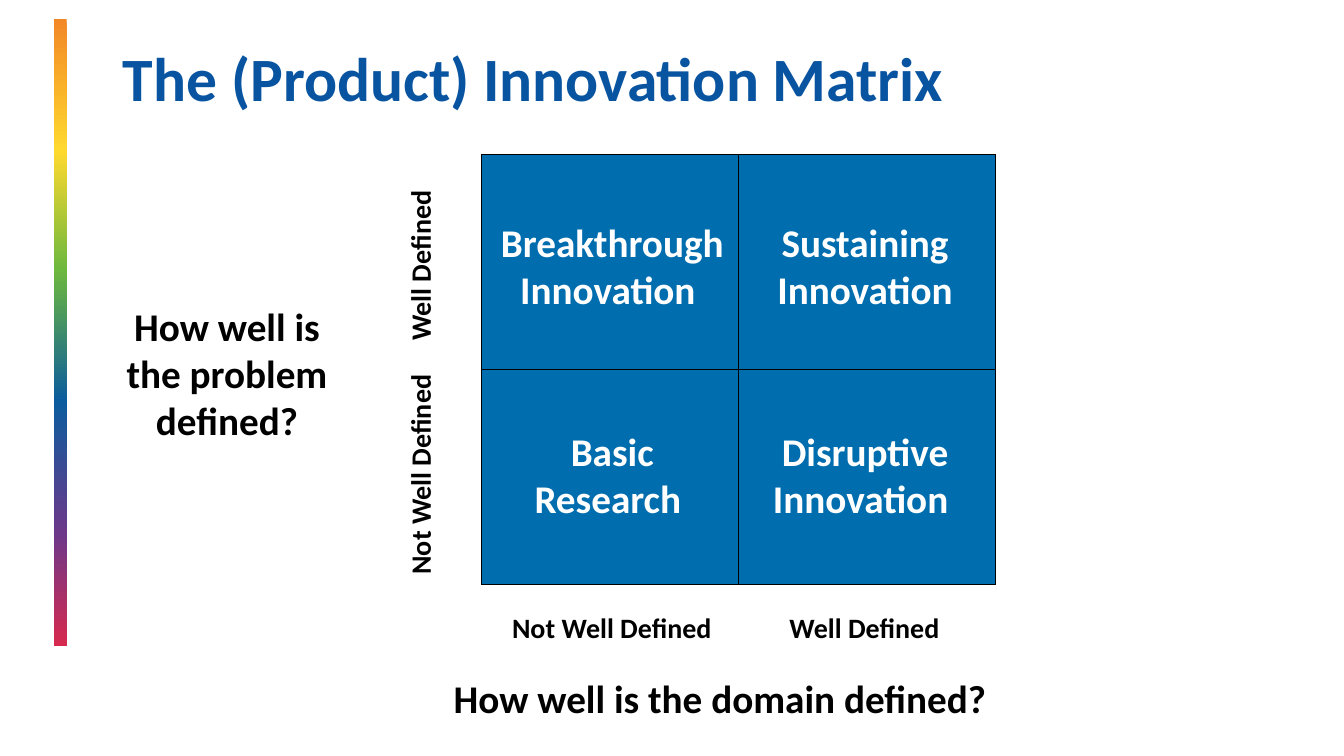
from dataclasses import dataclass

from lxml.etree import SubElement
from pptx import Presentation
from pptx.dml.color import RGBColor
from pptx.enum.shapes import MSO_SHAPE
from pptx.enum.text import MSO_ANCHOR, MSO_AUTO_SIZE, PP_ALIGN
from pptx.oxml import parse_xml
from pptx.oxml.ns import nsdecls, qn
from pptx.slide import Slide
from pptx.util import Cm, Pt

BLACK = RGBColor(0x00, 0x00, 0x00)
WHITE = RGBColor(0xFF, 0xFF, 0xFF)
TITLE_BLUE = RGBColor(0x08, 0x54, 0xA0)
MATRIX_BLUE = RGBColor(0x00, 0x6D, 0xAE)
RAINBOW = (
    (0, RGBColor(0xF2, 0x87, 0x26)),
    (21, RGBColor(0xFF, 0xD9, 0x2E)),
    (40, RGBColor(0x6D, 0xB8, 0x3E)),
    (61, RGBColor(0x0B, 0x5C, 0x9D)),
    (82, RGBColor(0x6C, 0x38, 0x8A)),
    (100, RGBColor(0xD7, 0x29, 0x4E)),
)
FONT = "Calibri"
COLUMN_CENTERS = (15.43, 21.8)
ROW_CENTERS = (6.68, 11.95)
AXIS_X = 10.57
AXIS_Y = 15.79


@dataclass(frozen=True)
class Label:
    text: str
    center_x: float
    center_y: float
    width: float
    height: float
    size: int = 28
    color: RGBColor = BLACK
    fill: RGBColor | None = None
    align: PP_ALIGN = PP_ALIGN.CENTER
    wrap: bool = False
    rotation: int = 0
    inset: float = 0.18
    line_spacing: float = 1.0


def quadrant(text: str, row: int, column: int, width: float) -> Label:
    return Label(text, COLUMN_CENTERS[column], ROW_CENTERS[row], width, 2.74,
                 color=WHITE, fill=MATRIX_BLUE)


def scale_label(text: str, center_x: float, center_y: float, width: float,
                rotation: int = 0) -> Label:
    return Label(text, center_x, center_y, width, 1.19, size=20,
                 align=PP_ALIGN.LEFT, rotation=rotation)


LABELS = (
    Label("The (Product) Innovation Matrix", 17.45, 2.22, 29.21, 2.36, size=44,
          color=TITLE_BLUE, align=PP_ALIGN.LEFT, wrap=True, inset=0.25,
          line_spacing=0.9),
    quadrant("Basic\nResearch ", 1, 0, 4.32),
    quadrant("Sustaining\nInnovation", 0, 1, 4.8),
    quadrant("Breakthrough\nInnovation ", 0, 0, 6.02),
    quadrant("Disruptive\nInnovation ", 1, 1, 5.03),
    scale_label("Not Well Defined", COLUMN_CENTERS[0], AXIS_Y, 5.41),
    scale_label("Well Defined", COLUMN_CENTERS[1], AXIS_Y, 4.17),
    scale_label("Not Well Defined", AXIS_X, ROW_CENTERS[1], 5.41, 270),
    scale_label("Well Defined", AXIS_X, ROW_CENTERS[0], 4.17, 270),
    Label("How well is the problem defined?", 5.72, 9.83, 6.15, 4.78, wrap=True),
    Label("How well is the domain defined?", 18.14, 17.89, 20.93, 2.16, wrap=True),
)


def add_rainbow_bar(page: Slide) -> None:
    bar = page.shapes.add_shape(
        MSO_SHAPE.RECTANGLE, Cm(1.35), Cm(0.48), Cm(0.33), Cm(15.8))
    bar.shadow.inherit = False
    bar.line.fill.background()
    stops = "".join(
        f'<a:gs pos="{position * 1000}"><a:srgbClr val="{color}"/></a:gs>'
        for position, color in RAINBOW)
    gradient = parse_xml(
        f'<a:gradFill {nsdecls("a")} rotWithShape="1"><a:gsLst>{stops}</a:gsLst>'
        '<a:lin ang="5400000" scaled="0"/></a:gradFill>')
    bar.element.spPr.find(qn("a:prstGeom")).addnext(gradient)


def add_matrix(page: Slide) -> None:
    frame = page.shapes.add_table(2, 2, Cm(12.14), Cm(3.89), Cm(12.95), Cm(10.84))
    table = frame.table
    table.first_row = False
    table.horz_banding = False
    for cell in table.iter_cells():
        properties = cell._tc.get_or_add_tcPr()
        for side in ("a:lnL", "a:lnR", "a:lnT", "a:lnB"):
            border = SubElement(properties, qn(side), w=str(Pt(1)))
            solid = SubElement(border, qn("a:solidFill"))
            SubElement(solid, qn("a:srgbClr"), val=str(BLACK))
        cell.fill.solid()
        cell.fill.fore_color.rgb = MATRIX_BLUE


def add_label(page: Slide, label: Label) -> None:
    place = (Cm(label.center_x - label.width / 2),
             Cm(label.center_y - label.height / 2),
             Cm(label.width), Cm(label.height))
    if label.fill is None:
        box = page.shapes.add_textbox(*place)
    else:
        box = page.shapes.add_shape(MSO_SHAPE.RECTANGLE, *place)
        box.shadow.inherit = False
        box.fill.solid()
        box.fill.fore_color.rgb = label.fill
        box.line.fill.background()
    box.rotation = label.rotation
    frame = box.text_frame
    frame.text = label.text
    frame.word_wrap = label.wrap
    frame.auto_size = MSO_AUTO_SIZE.NONE if label.wrap else MSO_AUTO_SIZE.SHAPE_TO_FIT_TEXT
    frame.vertical_anchor = MSO_ANCHOR.TOP
    frame.margin_left = frame.margin_right = Cm(label.inset)
    frame.margin_top = frame.margin_bottom = Cm(min(label.inset, 0.18))
    for paragraph in frame.paragraphs:
        paragraph.alignment = label.align
        paragraph.line_spacing = label.line_spacing
        for span in paragraph.runs:
            span.font.name = FONT
            span.font.size = Pt(label.size)
            span.font.bold = True
            span.font.color.rgb = label.color


def main() -> None:
    deck = Presentation()
    deck.slide_width = Cm(33.87)
    deck.slide_height = Cm(19.05)
    page = deck.slides.add_slide(deck.slide_layouts[6])
    add_rainbow_bar(page)
    add_matrix(page)
    for label in LABELS:
        add_label(page, label)
    deck.save("out.pptx")


if __name__ == "__main__":
    main()
